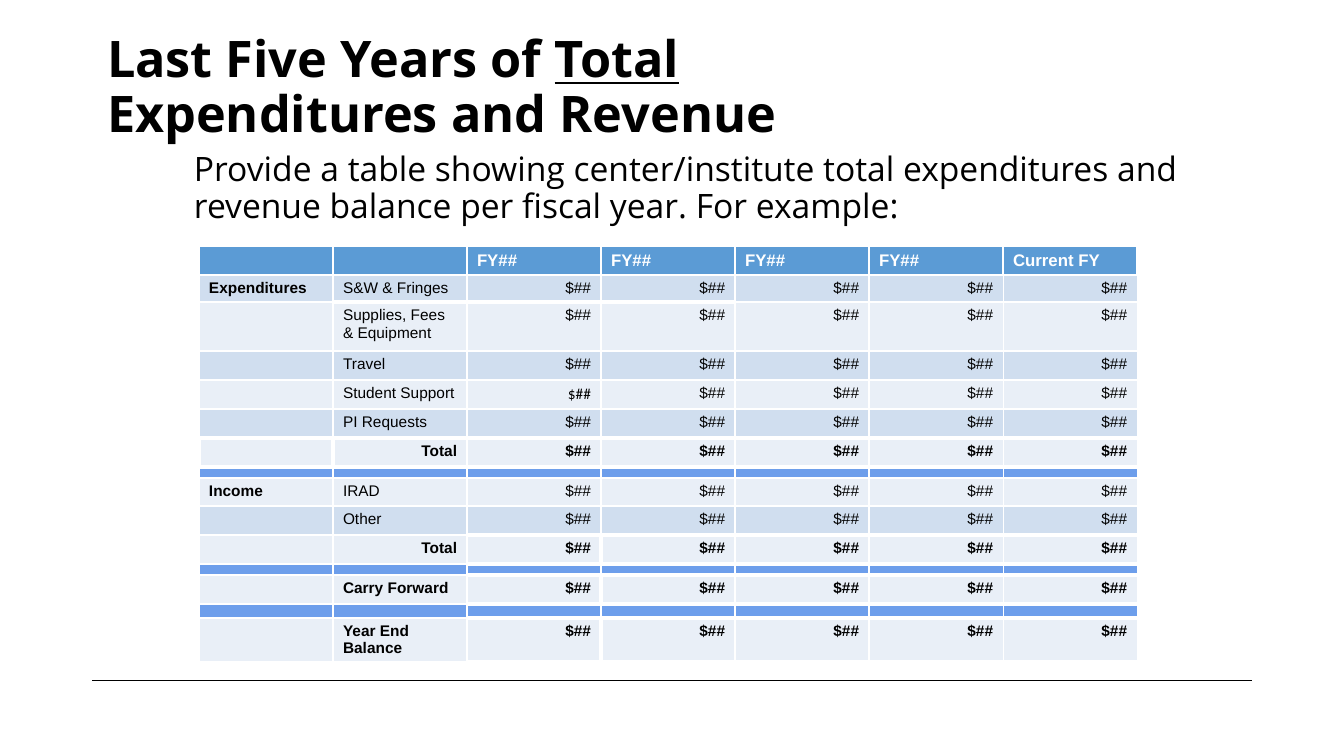
from dataclasses import dataclass

from lxml.etree import SubElement
from pptx import Presentation
from pptx.dml.color import RGBColor as Rgb
from pptx.enum.shapes import MSO_CONNECTOR as Link
from pptx.enum.text import MSO_ANCHOR as Anchor
from pptx.enum.text import MSO_AUTO_SIZE as Fit
from pptx.enum.text import PP_ALIGN as Align
from pptx.oxml.ns import qn
from pptx.util import Inches, Pt

SCALE = 9071
COLORS = {
    "ink": "000000",
    "white": "FFFFFF",
    "head": "5B9BD5",
    "dark": "D0DEEF",
    "light": "E9EFF7",
    "bar": "6D9EEB",
}
YEARS = 5
COLS = YEARS + 2
WIDTH = 134


@dataclass
class Row:
    height: int
    fill: str
    group: str = ""
    label: str = ""
    bold: bool = False
    right: bool = False


ROWS = [
    Row(29, "head", bold=True),
    Row(27, "dark", "Expenditures", "S&W & Fringes"),
    Row(49, "light", label="Supplies, Fees & Equipment"),
    Row(29, "dark", label="Travel"),
    Row(29, "light", label="Student Support"),
    Row(27, "dark", label="PI Requests"),
    Row(27, "light", label="Total", bold=True, right=True),
    Row(11, "bar"),
    Row(28, "light", "Income", "IRAD"),
    Row(27, "dark", label="Other"),
    Row(28, "light", label="Total", bold=True, right=True),
    Row(11, "bar"),
    Row(28, "light", label="Carry Forward", bold=True),
    Row(14, "bar"),
    Row(44, "light", label="Year End Balance", bold=True),
]
HEADS = ["", ""] + ["FY##"] * (YEARS - 1) + ["Current FY"]


def px(count: int) -> int:
    return count * SCALE


def tint(name: str) -> Rgb:
    return Rgb.from_string(COLORS[name])


def write(para, text: str, size: int, face: str, color: str = "ink",
          bold: bool = False, under: bool = False) -> None:
    run = para.add_run()
    run.text = text
    font = run.font
    font.size, font.name = Pt(size), face
    font.bold, font.underline = bold, under
    font.color.rgb = tint(color)


def place(shape, left: int, top: int, width: int, height: int, anchor: Anchor):
    shape.left, shape.top = px(left), px(top)
    shape.width, shape.height = px(width), px(height)
    frame = shape.text_frame
    frame.word_wrap, frame.auto_size = True, Fit.NONE
    frame.vertical_anchor = anchor
    frame.margin_left = frame.margin_right = px(10)
    frame.margin_top = frame.margin_bottom = px(5)
    return frame


def flush(para) -> None:
    para.alignment, para.line_spacing = Align.LEFT, 0.9
    para.space_before = Pt(0)


def level(edge: int, col: int) -> float:
    if edge < 2:
        return 2.25
    if edge == 2:
        return 3 if col in (1, 2, 3) else 1
    if edge in (6, 7):
        return 3
    if edge < 9:
        return 1
    if col < 2:
        return 1.5
    return 1 if edge == 9 else 3


def upright(edge: int, row: int) -> float:
    if row == 0:
        return 2.25
    if row == 6 and edge < 2:
        return 3
    if row > 8 and edge < 3:
        return 1.5
    return 3 if edge == 3 and row in (10, 12, 14) else 1


def border(cell, row: int, col: int) -> None:
    sides = {
        "L": upright(col, row),
        "R": upright(col + 1, row),
        "T": level(row, col),
        "B": level(row + 1, col),
    }
    props = cell._tc.get_or_add_tcPr()
    for side, weight in sides.items():
        line = SubElement(props, qn("a:ln" + side), w=str(Pt(weight)))
        solid = SubElement(line, qn("a:solidFill"))
        SubElement(solid, qn("a:srgbClr"), val=COLORS["white"])


def fill_cell(cell, spec: Row, row: int, col: int) -> None:
    bar = spec.fill == "bar"
    cell.margin_left = cell.margin_right = px(10)
    cell.margin_top = cell.margin_bottom = 0 if bar else px(5)
    border(cell, row, col)
    cell.fill.solid()
    cell.fill.fore_color.rgb = tint(spec.fill)
    if row == 0:
        text = HEADS[col]
    elif bar:
        text = ""
    else:
        text = ([spec.group, spec.label] + ["$##"] * YEARS)[col]
    para = cell.text_frame.paragraphs[0]
    if not text:
        para._p.get_or_add_endParaRPr().set("sz", "100" if bar else "1100")
        return
    if row and (col > 1 or col == 1 and spec.right):
        para.alignment = Align.RIGHT
    face = "Calibri" if (row, col) == (4, 2) else "Arial"
    write(para, text, 11 if row else 12, face, "ink" if row else "white",
          spec.bold or col == 0)


def draw_table(slide) -> None:
    tall = sum(spec.height for spec in ROWS)
    table = slide.shapes.add_table(len(ROWS), COLS, px(199), px(246),
                                   px(WIDTH * COLS), px(tall)).table
    table.horz_banding = False
    for col in table.columns:
        col.width = px(WIDTH)
    for row, spec in enumerate(ROWS):
        table.rows[row].height = px(spec.height)
        for col in range(COLS):
            fill_cell(table.cell(row, col), spec, row, col)


def draw_rule(slide) -> None:
    rule = slide.shapes.add_connector(Link.STRAIGHT, px(92), px(681),
                                      px(1252), px(681))
    rule.line.color.rgb = tint("ink")
    rule.line.width = Pt(0.75)
    SubElement(rule._element.spPr, qn("a:effectLst"))


def draw_text(slide) -> None:
    frame = place(slide.shapes.title, 97, 67, 1161, 81, Anchor.BOTTOM)
    first, second = frame.paragraphs[0], frame.add_paragraph()
    for para in (first, second):
        flush(para)
    write(first, "Last Five Years of ", 36, "Open Sans", bold=True)
    write(first, "Total", 36, "Open Sans", bold=True, under=True)
    write(second, "Expenditures and Revenue", 36, "Open Sans", bold=True)
    box = slide.shapes.add_textbox(0, 0, 0, 0)
    para = place(box, 184, 148, 1074, 386, Anchor.TOP).paragraphs[0]
    flush(para)
    write(para, "Provide a table showing center/institute total expenditures "
          "and revenue balance per fiscal year. For example:", 24, "Open Sans")


def main() -> None:
    deck = Presentation()
    deck.slide_width, deck.slide_height = Inches(13.33), Inches(7.5)
    slide = deck.slides.add_slide(deck.slide_layouts[5])
    draw_rule(slide)
    draw_text(slide)
    draw_table(slide)
    deck.save("out.pptx")


if __name__ == "__main__":
    main()
